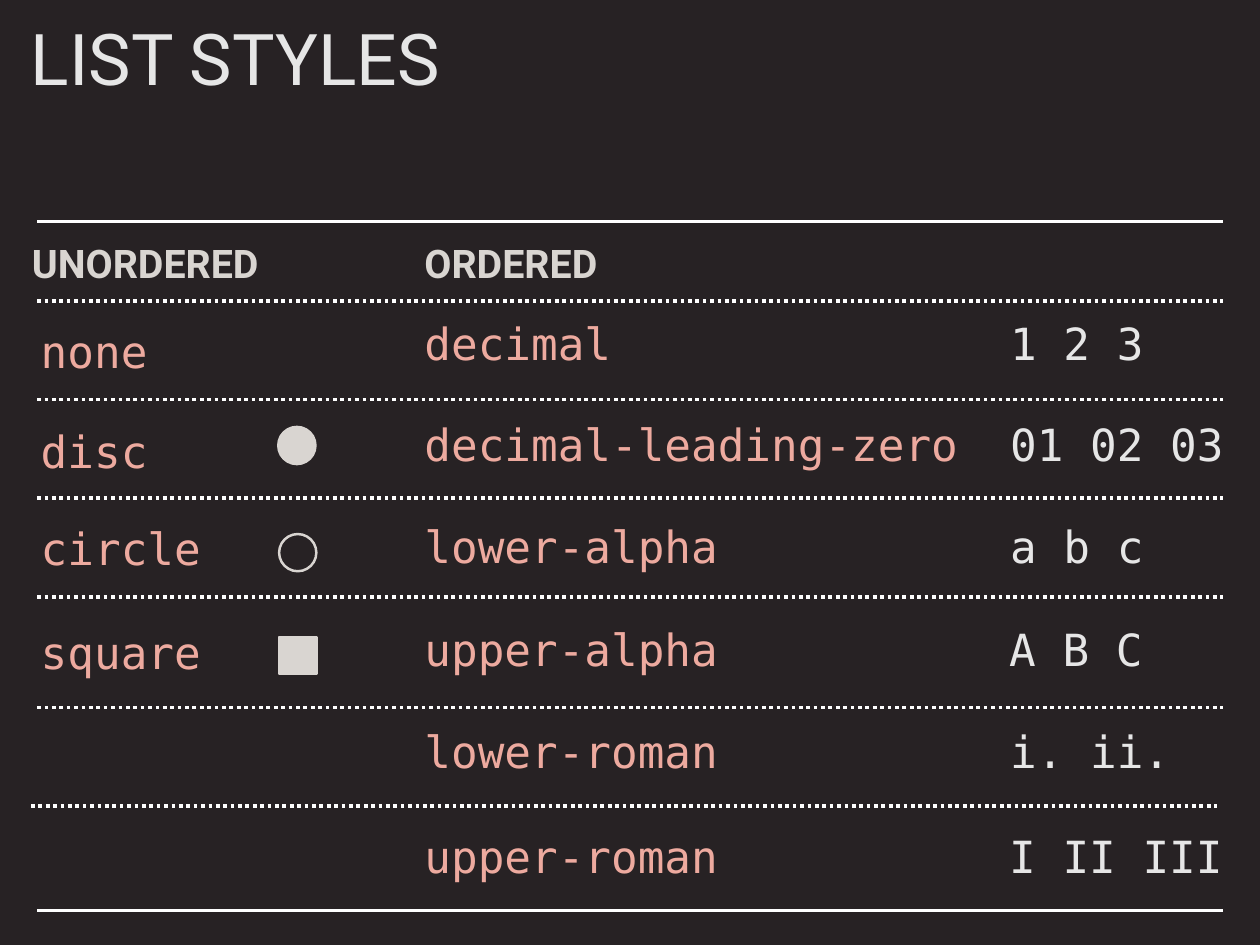
from pptx import Presentation
from pptx.dml.color import RGBColor
from pptx.enum.dml import MSO_LINE
from pptx.enum.shapes import MSO_CONNECTOR, MSO_SHAPE
from pptx.enum.text import MSO_ANCHOR
from pptx.oxml.ns import qn
from pptx.util import Inches, Pt
from lxml import etree

COLORS = {
    "background": "272224",
    "light": "E6E6E6",
    "stone": "D9D5D1",
    "salmon": "EDAA9F",
    "rule": "FFFFFF",
}
HEADING_FONT = "Roboto"
CODE_FONT = "DejaVu Sans Mono"


def add_text(words, left, top, width, height, size, font, color,
             anchor=MSO_ANCHOR.TOP, bold=False):
    box = slide.shapes.add_textbox(Inches(left), Inches(top), Inches(width), Inches(height))
    frame = box.text_frame
    frame.word_wrap = True
    frame.vertical_anchor = anchor
    frame.margin_left = frame.margin_right = frame.margin_top = frame.margin_bottom = 0
    paragraph = frame.paragraphs[0]
    paragraph.text = words
    paragraph.font.size = Pt(size)
    paragraph.font.name = font
    paragraph.font.bold = bold
    paragraph.font.color.rgb = RGBColor.from_string(COLORS[color])
    return paragraph


def add_rule(left, y, width_pt, dash=None):
    rule = slide.shapes.add_connector(
        MSO_CONNECTOR.STRAIGHT, Inches(left), Inches(y), Inches(left + 13.38), Inches(y))
    rule.line.color.rgb = RGBColor.from_string(COLORS["rule"])
    rule.line.width = Pt(width_pt)
    if dash:
        rule.line.dash_style = dash
    etree.SubElement(rule._element.spPr, qn("a:effectLst"))


prs = Presentation()
prs.slide_width = Inches(14.22)
prs.slide_height = Inches(10.67)
slide = prs.slides.add_slide(prs.slide_layouts[6])
slide.background.fill.solid()
slide.background.fill.fore_color.rgb = RGBColor.from_string(COLORS["background"])

title = add_text("LIST STYLES", 0.35, 0.35, 13.53, 1.97, 58, HEADING_FONT, "light")
title.line_spacing = 0.8

for heading, left, width in [("UNORDERED", 0.36, 3.4), ("ORDERED", 4.79, 2.68)]:
    add_text(heading, left, 2.65, width, 0.64, 32, HEADING_FONT, "stone",
             MSO_ANCHOR.MIDDLE, True)

for style, top in [("none", 3.61), ("disc", 4.73), ("circle", 5.83), ("square", 7.01)]:
    add_text(style, 0.46, top, 1.92, 0.71, 36, CODE_FONT, "salmon", MSO_ANCHOR.MIDDLE)

ordered_styles = [
    ("decimal", "1 2 3", 11.4, 3.57),
    ("decimal-leading-zero", "01 02 03", 11.4, 4.71),
    ("lower-alpha", "a b c", 11.4, 5.86),
    ("upper-alpha", "A B C", 11.39, 7.03),
    ("lower-roman", "i. ii.", 11.4, 8.18),
    ("upper-roman", "I II III", 11.39, 9.36),
]
for style, sample, sample_left, top in ordered_styles:
    add_text(style, 4.79, top, 6.15, 0.71, 36, CODE_FONT, "salmon")
    add_text(sample, sample_left, top, 2.56, 0.71, 36, CODE_FONT, "light")

markers = [
    (MSO_SHAPE.OVAL, 3.14, 4.82, True),
    (MSO_SHAPE.OVAL, 3.15, 6.03, False),
    (MSO_SHAPE.RECTANGLE, 3.15, 7.19, True),
]
for outline, left, top, filled in markers:
    marker = slide.shapes.add_shape(
        outline, Inches(left), Inches(top), Inches(0.42), Inches(0.42))
    marker.shadow.inherit = False
    marker.line.color.rgb = RGBColor.from_string(COLORS["stone"])
    marker.line.width = Pt(2)
    if filled:
        marker.fill.solid()
        marker.fill.fore_color.rgb = RGBColor.from_string(COLORS["stone"])
    else:
        marker.fill.background()

for y in (2.5, 10.28):
    add_rule(0.42, y, 2)
for y in (3.4, 4.51, 5.62, 6.74, 7.99):
    add_rule(0.42, y, 3, MSO_LINE.ROUND_DOT)
add_rule(0.35, 9.1, 3, MSO_LINE.ROUND_DOT)

prs.save("out.pptx")
